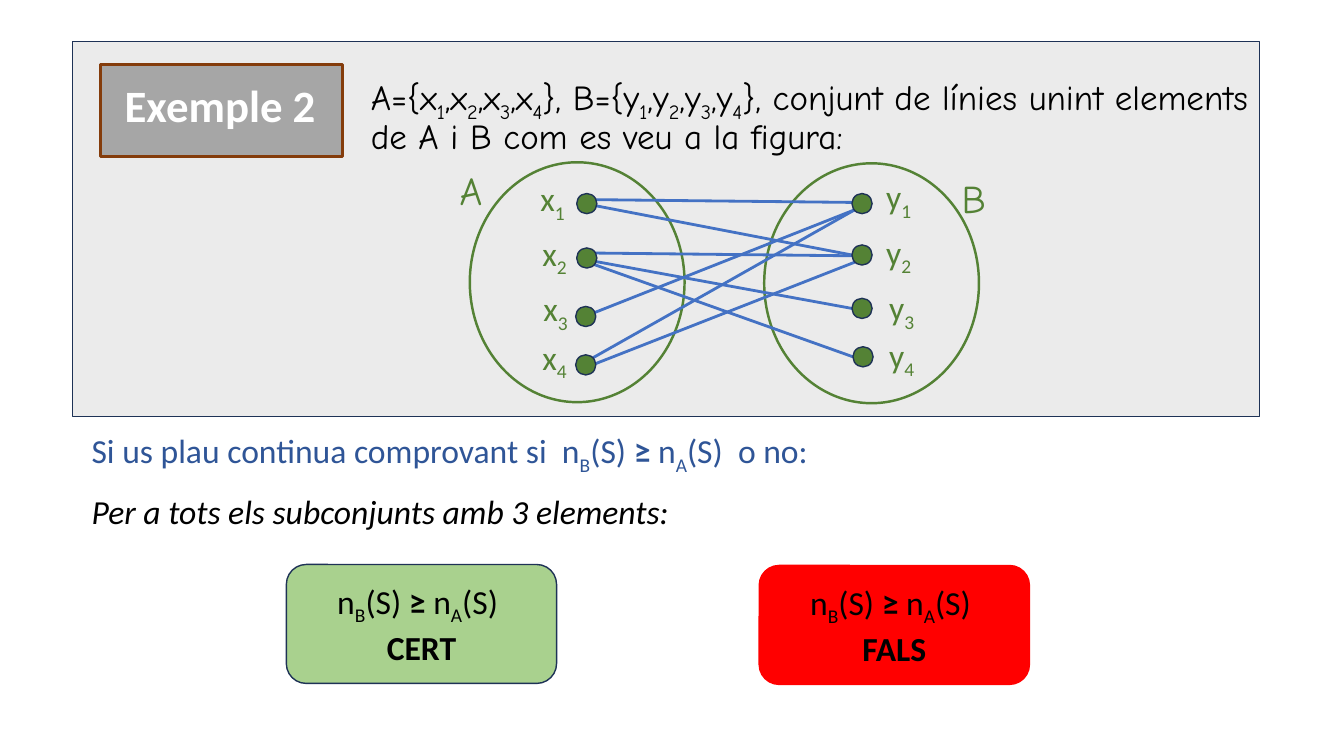
"""Build the slide on relations between two sets, with lengths in a grid of 0.1 inch cells."""
from lxml import etree
from pptx import Presentation
from pptx import util as u
from pptx.dml.color import RGBColor
from pptx.enum import shapes, text
from pptx.oxml.ns import qn

CELL = u.Inches(0.1)
GREEN, NAVY, BLUE, BLACK = "548235", "1E3256", "4472C4", "000000"
SET_FONT = "Comic Neue"
DOT = 2
X_DOTS = [(57.2, 19.2), (57.2, 24.6), (57.1, 30.4), (57.1, 35.2)]
Y_DOTS = [(84.5, 19.2), (84.5, 24.3), (84.5, 29.6), (84.6, 34.4)]
X_LABELS = [(52.6, 17.2), (52.8, 22.6), (52.9, 28.1), (52.8, 32.9)]
Y_LABELS = [(86.9, 17), (86.9, 22.5), (87.2, 28), (87.2, 32.7)]
LINKS = [
    (58.2, 19.8, 86.2, 20.1),
    (58.5, 20.3, 84.5, 25.3),
    (58.5, 25.1, 86.5, 25.4),
    (57.2, 25.6, 84.5, 30.6),
    (58.8, 26.2, 84.6, 35.4),
    (58.5, 31.2, 84.8, 20.8),
    (58.5, 36.3, 84.8, 26),
    (58.8, 35.5, 84.8, 20.8),
]
CONDITION = "n_B(S) *≥ *n_A(S)"


def color(value):
    """Turn a hex string into a colour."""
    return RGBColor.from_string(value)


def grid(*cells):
    """Turn grid cells into lengths."""
    return [round(cell * CELL) for cell in cells]


def add_run(paragraph, words, size, ink, font="Calibri", bold=False, italic=False, low=False):
    """Add one run, lowered to a subscript on request."""
    run = paragraph.add_run()
    run.text = words
    run.font.size, run.font.name = u.Pt(size), font
    run.font.bold, run.font.italic = bold, italic
    run.font.color.rgb = color(ink)
    if low:
        run.font._element.set("baseline", "-25000")


def add_math(paragraph, words, size, ink, **style):
    """Add runs where _ lowers the next letter and * switches bold."""
    for index, part in enumerate(words.split("*")):
        first, *others = part.split("_")
        bold = index % 2 == 1
        pieces = [(first, False)]
        for other in others:
            pieces += [(other[0], True), (other[1:], False)]
        for piece, low in pieces:
            if piece:
                add_run(paragraph, piece, size, ink, bold=bold, low=low, **style)


def add_text(slide, box, words, size=24, ink=GREEN, wrap=False, grow=True, **style):
    """Add a text box and return its paragraph."""
    frame = slide.shapes.add_textbox(*grid(*box)).text_frame
    frame.word_wrap = wrap
    frame.auto_size = text.MSO_AUTO_SIZE.SHAPE_TO_FIT_TEXT if grow else text.MSO_AUTO_SIZE.NONE
    add_math(frame.paragraphs[0], words, size, ink, **style)
    return frame.paragraphs[0]


def add_shape(slide, kind, box, fill, line, width=1):
    """Add a preset shape without a shadow; no fill when fill is None."""
    shape = slide.shapes.add_shape(kind, *grid(*box))
    shape.shadow.inherit = False
    if fill:
        shape.fill.solid()
        shape.fill.fore_color.rgb = color(fill)
    else:
        shape.fill.background()
    shape.line.color.rgb = color(line)
    shape.line.width = u.Pt(width)
    return shape


def add_link(slide, ends):
    """Add one line between an element of A and one of B."""
    link = slide.shapes.add_connector(shapes.MSO_CONNECTOR.STRAIGHT, *grid(*ends))
    link.line.color.rgb = color(BLUE)
    link.line.width = u.Pt(2)
    etree.SubElement(link._element.spPr, qn("a:effectLst"))


def add_panel(slide):
    """Add the half-transparent panel behind the example."""
    panel = add_shape(slide, shapes.MSO_SHAPE.RECTANGLE, (7.2, 4.1, 117.7, 37.2), "D9D9D9", NAVY)
    fill = panel._element.spPr.find(qn("a:solidFill"))
    etree.SubElement(fill[0], qn("a:alpha"), val="50000")


def add_title(slide):
    """Add the title plate of the example."""
    plate = add_shape(slide, shapes.MSO_SHAPE.RECTANGLE, (10, 6.4, 24, 9.1), "A6A6A6", "843C0B", 2)
    plate.text_frame.vertical_anchor = text.MSO_ANCHOR.TOP
    paragraph = plate.text_frame.paragraphs[0]
    paragraph.alignment = text.PP_ALIGN.LEFT
    paragraph.line_spacing = 0.9
    add_run(paragraph, " ", 44, "385723", bold=True)
    add_run(paragraph, "Exemple 2", 32, "FFFFFF", bold=True)


def add_set(slide, oval, name, name_at, letter, labels):
    """Add the oval of a set, its name and the names of its elements."""
    add_shape(slide, shapes.MSO_SHAPE.OVAL, (*oval, 21.3, 23.8), None, GREEN, 1.75)
    add_text(slide, (*name_at, 4.8, 5.7), name, 28, font=SET_FONT)
    for number, place in enumerate(labels, 1):
        add_text(slide, (*place, 4.65, 5), f"{letter}_{number}")


def add_answer(slide, place, verdict, fill, line):
    """Add an answer button with the condition and its verdict."""
    button = add_shape(slide, shapes.MSO_SHAPE.ROUNDED_RECTANGLE, (*place, 26.8, 11.8), fill, line)
    frame = button.text_frame
    frame.vertical_anchor = text.MSO_ANCHOR.MIDDLE
    for paragraph, words in ((frame.paragraphs[0], CONDITION + " "), (frame.add_paragraph(), f"*{verdict}*")):
        paragraph.alignment = text.PP_ALIGN.CENTER
        add_math(paragraph, words, 24, BLACK)


def main():
    """Build and save the presentation."""
    presentation = Presentation()
    presentation.slide_width, presentation.slide_height = u.Inches(13.33), u.Inches(7.5)
    slide = presentation.slides.add_slide(presentation.slide_layouts[6])
    add_panel(slide)
    add_set(slide, (46.6, 16.1), "A", (44.6, 16), "x", X_LABELS)
    add_set(slide, (75.8, 16.2), "B", (94.4, 16.8), "y", Y_LABELS)
    add_title(slide)
    for ends in LINKS:
        add_link(slide, ends)
    for place in X_DOTS + Y_DOTS:
        add_shape(slide, shapes.MSO_SHAPE.OVAL, (*place, DOT, DOT), GREEN, NAVY)
    add_text(slide, (8.1, 42.2, 119, 9.1), f"Si us plau continua comprovant si  {CONDITION}  o no:",
             ink="2F5597", wrap=True)
    add_text(slide, (8.1, 48.2, 112.2, 5), "Per a tots els subconjunts amb 3 elements:",
             ink=BLACK, wrap=True, italic=True)
    add_answer(slide, (28.4, 56), "CERT", "A9D18E", NAVY)
    add_answer(slide, (75.3, 56.1), "FALS", "FF0000", "FF0000")
    statement = add_text(
        slide, (35.8, 7.1, 90.3, 12.4),
        "A={x_1,x_2,x_3,x_4}, B={y_1,y_2,y_3,y_4}, conjunt de línies unint elements "
        "de A i B com es veu a la figura:",
        25, BLACK, wrap=True, grow=False, font=SET_FONT)
    statement.line_spacing = 0.9
    statement.space_before = u.Pt(10)
    presentation.save("out.pptx")


if __name__ == "__main__":
    main()
